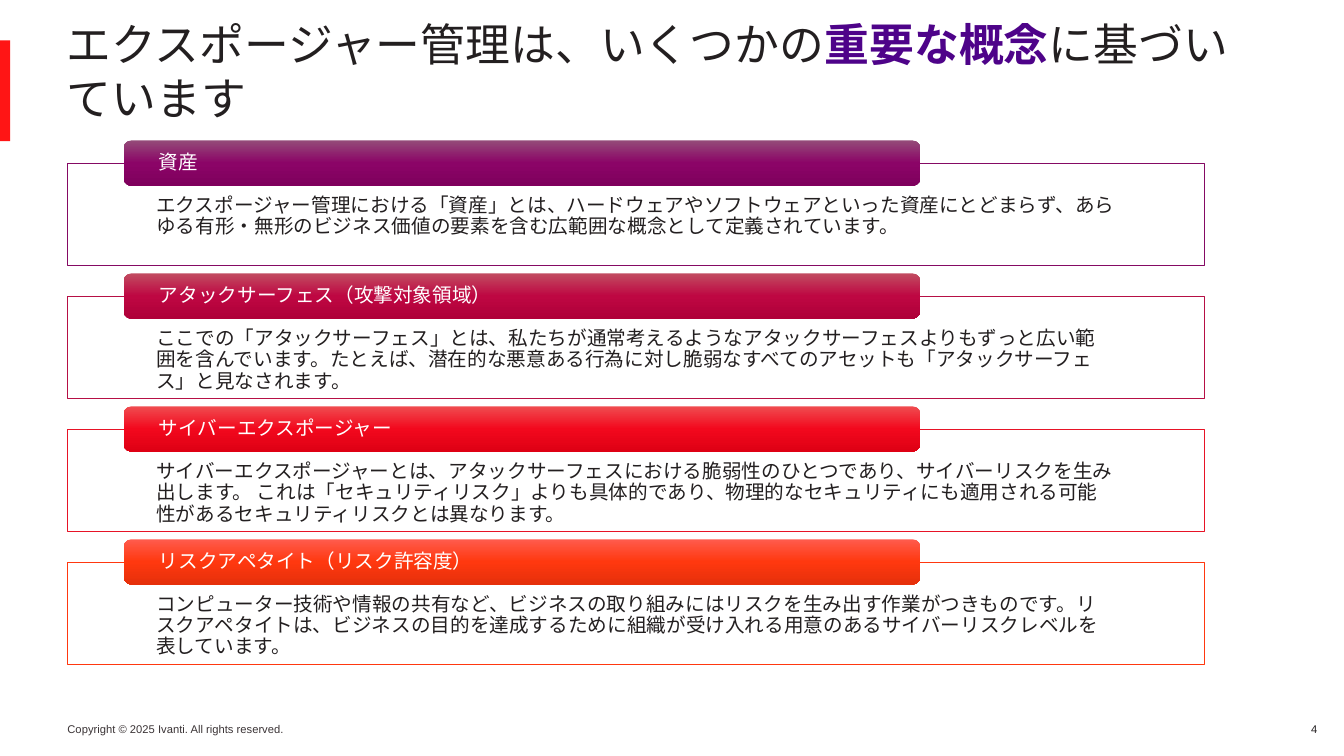
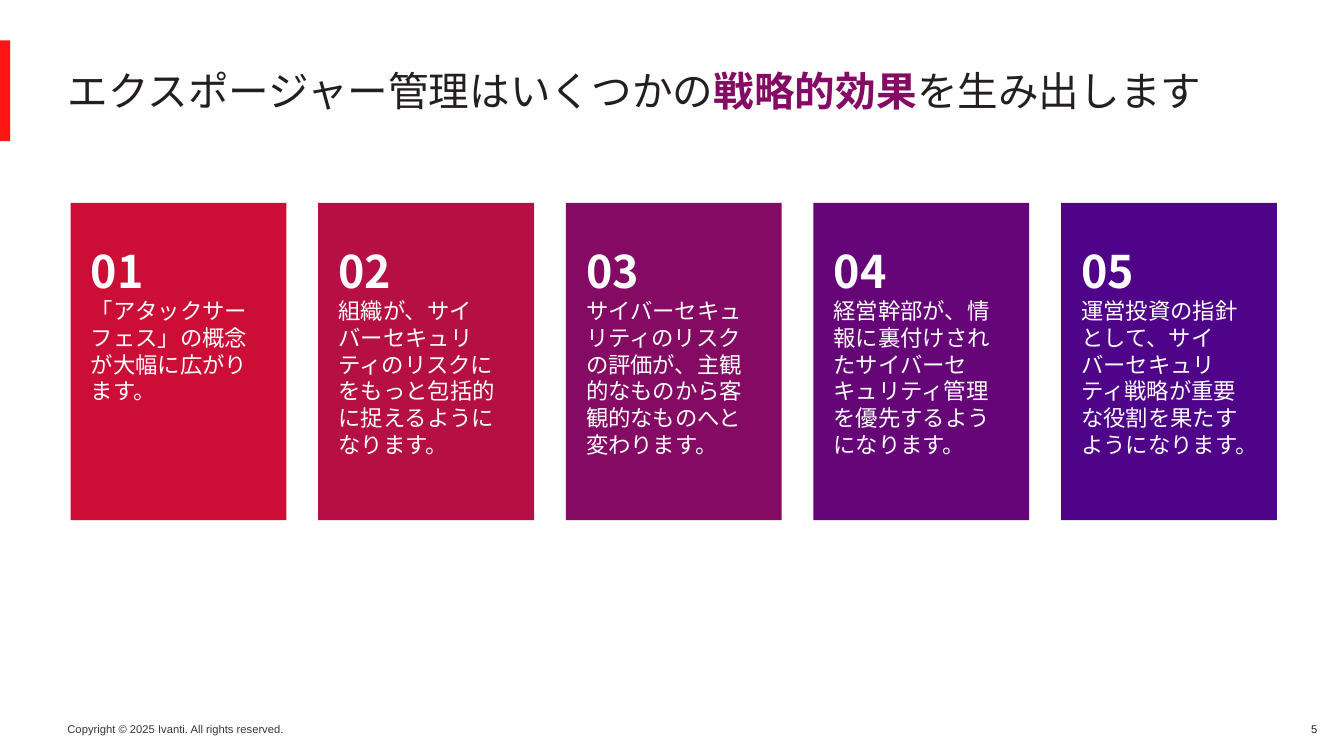
from copy import deepcopy

from lxml.etree import SubElement
from pptx import Presentation
from pptx.dml.color import RGBColor
from pptx.enum.lang import MSO_LANGUAGE_ID
from pptx.enum.shapes import MSO_SHAPE
from pptx.enum.text import MSO_ANCHOR, PP_ALIGN
from pptx.oxml.ns import qn
from pptx.util import Cm, Pt

# Shared style
JAPANESE, LATIN = "Noto Sans CJK JP", "Arial"
INK = RGBColor(0x23, 0x1F, 0x20)
GREY = RGBColor(0x3B, 0x34, 0x36)
WHITE = RGBColor(0xFF, 0xFF, 0xFF)
ACCENT_RED = RGBColor(0xFF, 0x15, 0x15)
CRIMSON = RGBColor(0xCC, 0x0E, 0x36)
ROSE = RGBColor(0xB6, 0x0F, 0x45)
PLUM = RGBColor(0x85, 0x0A, 0x64)
PURPLE = RGBColor(0x66, 0x05, 0x78)
INDIGO = RGBColor(0x4E, 0x03, 0x89)
SCARLET = RGBColor(0xE7, 0x13, 0x26)
ORANGE = RGBColor(0xFF, 0x38, 0x0F)
PLUM_SHEEN = [RGBColor(0x94, 0x4B, 0x78), RGBColor(0x8B, 0x04, 0x67), RGBColor(0x7F, 0x00, 0x5D)]
ROSE_SHEEN = [RGBColor(0xC1, 0x4C, 0x61), RGBColor(0xBE, 0x07, 0x42), RGBColor(0xAF, 0x00, 0x39)]
SCARLET_SHEEN = [RGBColor(0xF0, 0x4C, 0x50), RGBColor(0xF2, 0x08, 0x1D), RGBColor(0xDE, 0x00, 0x14)]
ORANGE_SHEEN = [RGBColor(0xFF, 0x5B, 0x4D), ORANGE, RGBColor(0xE5, 0x30, 0x0B)]

COPYRIGHT = "Copyright © 2025 Ivanti. All rights reserved."

# Slide content: titles are (before, emphasis, after)
CONCEPTS_TITLE = ("エクスポージャー管理は、いくつかの", "重要な概念", "に基づいています")
CONCEPTS = [
    ("資産",
     "エクスポージャー管理における「資産」とは、ハードウェアやソフトウェアといった資産にとどまらず、"
     "あらゆる有形・無形のビジネス価値の要素を含む広範囲な概念として定義されています。",
     PLUM, PLUM_SHEEN),
    ("アタックサーフェス（攻撃対象領域）",
     "ここでの「アタックサーフェス」とは、私たちが通常考えるようなアタックサーフェスよりもずっと広い範囲を含んでいます。"
     "たとえば、潜在的な悪意ある行為に対し脆弱なすべてのアセットも「アタックサーフェス」と見なされます。",
     ROSE, ROSE_SHEEN),
    ("サイバーエクスポージャー",
     "サイバーエクスポージャーとは、アタックサーフェスにおける脆弱性のひとつであり、サイバーリスクを生み出します。 "
     "これは「セキュリティリスク」よりも具体的であり、物理的なセキュリティにも適用される可能性がある"
     "セキュリティリスクとは異なります。",
     SCARLET, SCARLET_SHEEN),
    ("リスクアペタイト（リスク許容度）",
     "コンピューター技術や情報の共有など、ビジネスの取り組みにはリスクを生み出す作業がつきものです。"
     "リスクアペタイトは、ビジネスの目的を達成するために組織が受け入れる用意のあるサイバーリスクレベルを表しています。",
     ORANGE, ORANGE_SHEEN),
]

EFFECTS_TITLE = ("エクスポージャー管理はいくつかの", "戦略的効果", "を生み出します")
EFFECTS = [
    ("「アタックサーフェス」の概念が大幅に広がります。", CRIMSON),
    ("組織が、サイバーセキュリティのリスクにをもっと包括的に捉えるようになります。", ROSE),
    ("サイバーセキュリティのリスクの評価が、主観的なものから客観的なものへと変わります。", PLUM),
    ("経営幹部が、情報に裏付けされたサイバーセキュリティ管理を優先するようになります。", PURPLE),
    ("運営投資の指針として、サイバーセキュリティ戦略が重要な役割を果たすようになります。", INDIGO),
]


def cm_box(*lengths):
    return [Cm(length) for length in lengths]


def set_frame(shape, insets, anchor=MSO_ANCHOR.TOP, wrap=True):
    """Insets are left, top, right, bottom in cm."""
    frame = shape.text_frame
    frame.margin_left, frame.margin_top, frame.margin_right, frame.margin_bottom = cm_box(*insets)
    frame.vertical_anchor = anchor
    frame.word_wrap = wrap
    return frame


def style(paragraph, size, color, name=JAPANESE, bold=False, leading=1.2, align=PP_ALIGN.LEFT):
    paragraph.alignment = align
    paragraph.line_spacing = Pt(round(size * leading, 1))
    font = paragraph.font
    font.size, font.bold, font.name = Pt(size), bold, name
    font.color.rgb = color
    if name == JAPANESE:
        font.language_id = MSO_LANGUAGE_ID.JAPANESE
        defaults = paragraph._p.pPr.find(qn("a:defRPr"))
        SubElement(defaults, qn("a:ea"), typeface=name)


def add_box(slide, box, fill=None, line=None, kind=MSO_SHAPE.RECTANGLE):
    shape = slide.shapes.add_shape(kind, *cm_box(*box))
    shape.shadow.inherit = False
    if fill is not None:
        shape.fill.solid()
        shape.fill.fore_color.rgb = fill
    if line is None:
        shape.line.fill.background()
    else:
        shape.line.color.rgb = line
        shape.line.width = Pt(0.5)
    return shape


def fill_sheen(shape, colors):
    """Three-stop gradient from top to bottom."""
    shape.fill.gradient()
    shape.fill.gradient_angle = 270
    stop_list = shape._element.spPr.find(".//" + qn("a:gsLst"))
    stop_list.insert(1, deepcopy(stop_list[0]))
    for stop, color, position in zip(shape.fill.gradient_stops, colors, (0, 0.5, 1)):
        stop.color.rgb = color
        stop.position = position


def add_footer_text(slide, box, text, color, align, wrap):
    label = slide.shapes.add_textbox(*cm_box(*box))
    paragraph = set_frame(label, (0, 0.13, 0.25, 0.13), wrap=wrap).paragraphs[0]
    paragraph.text = text
    style(paragraph, 8, color, LATIN, align=align)


def new_slide(prs, number, title, title_box, title_size, emphasis_color):
    slide = prs.slides.add_slide(prs.slide_layouts[6])
    # Footer and accent band
    add_footer_text(slide, (1.7, 18.06, 5.79, 0.61), COPYRIGHT, GREY, PP_ALIGN.LEFT, False)
    add_box(slide, (0, 1.02, 0.26, 2.54), ACCENT_RED)
    add_footer_text(slide, (32.23, 18.06, 1.22, 0.61), str(number), INK, PP_ALIGN.RIGHT, True)
    # Title with one emphasised phrase
    heading = slide.shapes.add_textbox(*cm_box(*title_box))
    paragraph = set_frame(heading, (0, 0, 0.25, 0), MSO_ANCHOR.MIDDLE).paragraphs[0]
    runs = [paragraph.add_run() for _ in title]
    for run, text in zip(runs, title):
        run.text = text
    style(paragraph, title_size, INK)
    emphasis = runs[1].font
    emphasis.bold = True
    emphasis.color.rgb = emphasis_color
    return slide


def add_concept(slide, top, name, description, color, sheen):
    # Outlined description
    panel = add_box(slide, (1.7, top, 28.65, 2.57), WHITE, color)
    panel_color = panel._element.spPr.find(qn("a:solidFill"))[0]
    SubElement(panel_color, qn("a:alpha"), val="90000")
    body = set_frame(panel, (2.24, 0.81, 2.24, 0.28)).paragraphs[0]
    body.text = description
    style(body, 14, INK, leading=1.08)
    # Header bar over the top edge
    header = add_box(slide, (3.12, top - 0.58, 20.07, 1.14), kind=MSO_SHAPE.ROUNDED_RECTANGLE)
    fill_sheen(header, sheen)
    label = set_frame(header, (0.83, 0, 0.83, 0), MSO_ANCHOR.MIDDLE).paragraphs[0]
    label.text = name
    style(label, 14, WHITE, leading=1.08)


def add_effect(slide, left, number, effect, color):
    card = add_box(slide, (left, 5.11, 5.44, 8), color)
    frame = set_frame(card, (0.51, 1.02, 0.51, 0.25))
    heading, body = frame.paragraphs[0], frame.add_paragraph()
    heading.text, body.text = f"{number:02}", effect
    style(heading, 32, WHITE, bold=True)
    style(body, 16, WHITE)


def main():
    prs = Presentation()
    prs.slide_width, prs.slide_height = cm_box(33.87, 19.05)

    # Key concepts
    slide = new_slide(prs, 4, CONCEPTS_TITLE, (1.68, 0.99, 30.5, 1.57), 32, INDIGO)
    for row, concept in enumerate(CONCEPTS):
        add_concept(slide, 4.12 + row * 3.35, *concept)

    # Strategic effects
    slide = new_slide(prs, 5, EFFECTS_TITLE, (1.7, 1.5, 32.16, 1.57), 29, PLUM)
    for column, (effect, color) in enumerate(EFFECTS):
        add_effect(slide, 1.78 + column * 6.24, column + 1, effect, color)

    prs.save("out.pptx")


if __name__ == "__main__":
    main()
